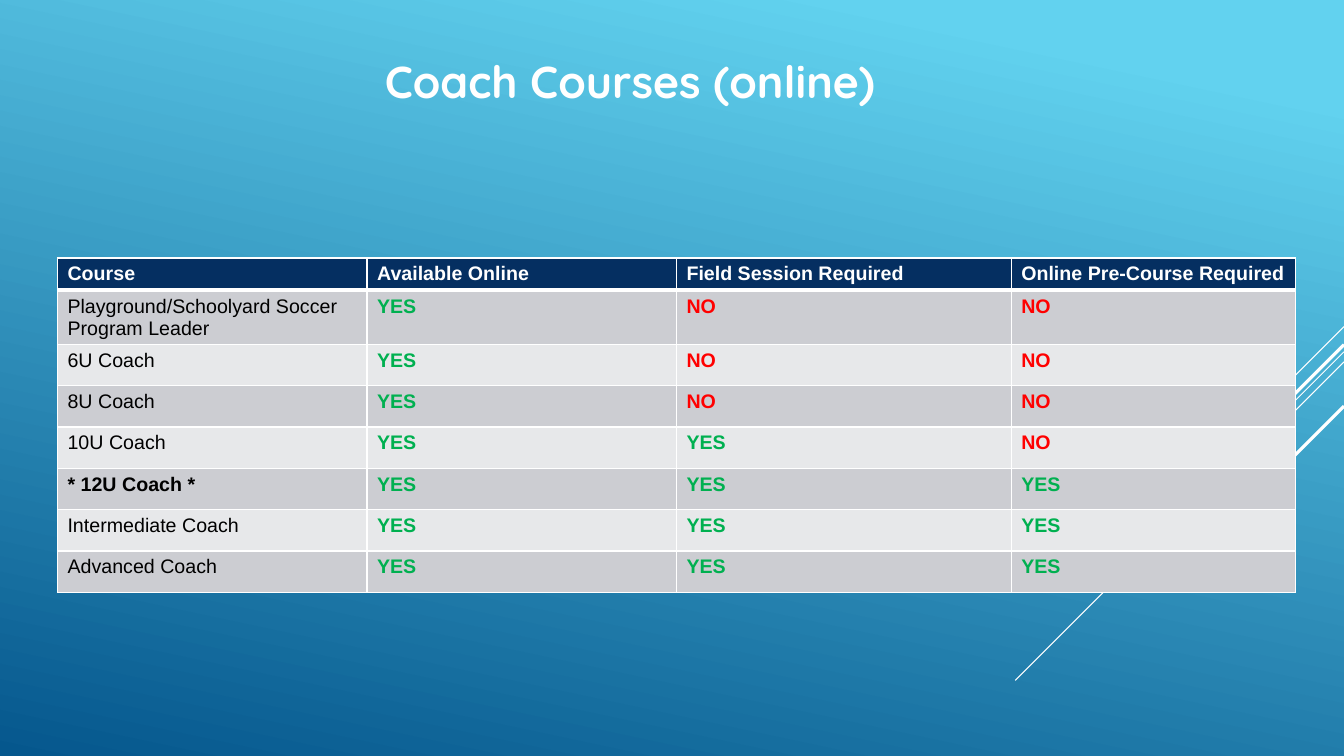
from copy import deepcopy
from dataclasses import dataclass

from lxml import etree
from pptx import Presentation
from pptx.dml.color import RGBColor
from pptx.enum.shapes import MSO_CONNECTOR
from pptx.enum.text import MSO_ANCHOR, PP_ALIGN
from pptx.oxml.ns import qn
from pptx.util import Inches, Pt

STRAIGHT = MSO_CONNECTOR.STRAIGHT
MIDDLE = MSO_ANCHOR.MIDDLE
CENTER = PP_ALIGN.CENTER


@dataclass(frozen=True)
class Theme:
    white: str = "FFFFFF"
    black: str = "000000"
    sky: str = "62D2EF"
    ocean: str = "05578D"
    navy: str = "052F61"
    bands: tuple = ("CCCDD2", "E7E8EA")
    yes: str = "00B050"
    no: str = "FF0000"
    title_font: str = "Quicksand"
    table_font: str = "Arial"
    title_size: int = 32
    table_size: int = 14
    thin_border: float = 1
    header_border: float = 3


THEME = Theme()
SLIDE_WIDTH, SLIDE_HEIGHT = 13.33, 7.5
TITLE_BOX = (0.75, 0.13, 11, 1.34)
TABLE_BOX = (0.57, 2.56, 12.28, 3.18)
COLUMN_WIDTHS = (3.07, 3.07, 3.32, 2.82)
HEADER_HEIGHT = 0.31
STREAKS = (
    (3.24, 1.0, 0.75),
    (3.49, 3.26, 0.75),
    (3.59, 2.07, 0.75),
    (3.42, 1.91, 2.25),
    (4.03, 1.39, 2.25),
)
HEADINGS = ("Course", "Available Online", "Field Session Required",
            "Online Pre-Course Required")
COURSES = (
    ("Playground/Schoolyard Soccer Program Leader", "YES", "NO", "NO"),
    ("6U Coach", "YES", "NO", "NO"),
    ("8U Coach", "YES", "NO", "NO"),
    ("10U Coach", "YES", "YES", "NO"),
    ("* 12U Coach *", "YES", "YES", "YES"),
    ("Intermediate Coach", "YES", "YES", "YES"),
    ("Advanced Coach", "YES", "YES", "YES"),
)


def add_text(paragraph, text, font_name, size, color, bold):
    run = paragraph.add_run()
    run.text = text
    run.font.name = font_name
    run.font.size = Pt(size)
    run.font.bold = bold
    run.font.color.rgb = RGBColor.from_string(color)


def paint_background(slide):
    fill = slide.background.fill
    fill.gradient()
    fill.gradient_angle = 258
    light, dark = fill.gradient_stops
    light.color.rgb = RGBColor.from_string(THEME.sky)
    light.position = 0
    dark.color.rgb = RGBColor.from_string(THEME.ocean)
    dark.position = 1
    first_stop = slide.element.find(".//" + qn("a:gs"))
    held_stop = deepcopy(first_stop)
    held_stop.set("pos", "10000")
    first_stop.addnext(held_stop)


def add_streaks(slide, right):
    for top, reach, weight in STREAKS:
        streak = slide.shapes.add_connector(
            STRAIGHT, Inches(right), Inches(top),
            Inches(right - reach), Inches(top + reach))
        streak.line.color.rgb = RGBColor.from_string(THEME.white)
        streak.line.width = Pt(weight)
        etree.SubElement(streak.element.spPr, qn("a:effectLst"))


def add_title(slide, box):
    title = slide.shapes.title
    title.left, title.top, title.width, title.height = map(Inches, box)
    frame = title.text_frame
    frame.vertical_anchor = MIDDLE
    frame.word_wrap = True
    heading = frame.paragraphs[0]
    heading.alignment = CENTER
    add_text(heading, "Coach Courses (online)", THEME.title_font,
             THEME.title_size, THEME.white, True)


def set_borders(cell, top, bottom):
    properties = cell._tc.get_or_add_tcPr()
    weights = {"L": THEME.thin_border, "R": THEME.thin_border,
               "T": top, "B": bottom}
    for position, (side, weight) in enumerate(weights.items()):
        border = etree.Element(qn("a:ln" + side), w=str(Pt(weight)))
        solid = etree.SubElement(border, qn("a:solidFill"))
        etree.SubElement(solid, qn("a:srgbClr"), val=THEME.white)
        properties.insert(position, border)


def cell_style(row, column, text):
    if row == 0:
        return THEME.navy, THEME.white, True
    band = THEME.bands[(row - 1) % 2]
    if column == 0:
        return band, THEME.black, text.startswith("*")
    return band, THEME.yes if text == "YES" else THEME.no, True


def add_course_table(slide, box):
    records = (HEADINGS,) + COURSES
    table = slide.shapes.add_table(
        len(records), len(HEADINGS), *map(Inches, box)).table
    table.horz_banding = False
    for column, width in zip(table.columns, COLUMN_WIDTHS):
        column.width = Inches(width)
    course_height = (box[3] - HEADER_HEIGHT) / len(COURSES)
    for row, record in enumerate(records):
        table.rows[row].height = Inches(course_height if row else HEADER_HEIGHT)
        for column, text in enumerate(record):
            cell = table.cell(row, column)
            fill, color, bold = cell_style(row, column, text)
            cell.fill.solid()
            cell.fill.fore_color.rgb = RGBColor.from_string(fill)
            set_borders(
                cell,
                THEME.header_border if row == 1 else THEME.thin_border,
                THEME.header_border if row == 0 else THEME.thin_border)
            add_text(cell.text_frame.paragraphs[0], text, THEME.table_font,
                     THEME.table_size, color, bold)


def main():
    deck = Presentation()
    deck.slide_width = Inches(SLIDE_WIDTH)
    deck.slide_height = Inches(SLIDE_HEIGHT)
    slide = deck.slides.add_slide(deck.slide_layouts.get_by_name("Title Only"))
    paint_background(slide)
    add_streaks(slide, SLIDE_WIDTH)
    add_title(slide, TITLE_BOX)
    add_course_table(slide, TABLE_BOX)
    deck.save("out.pptx")


if __name__ == "__main__":
    main()
